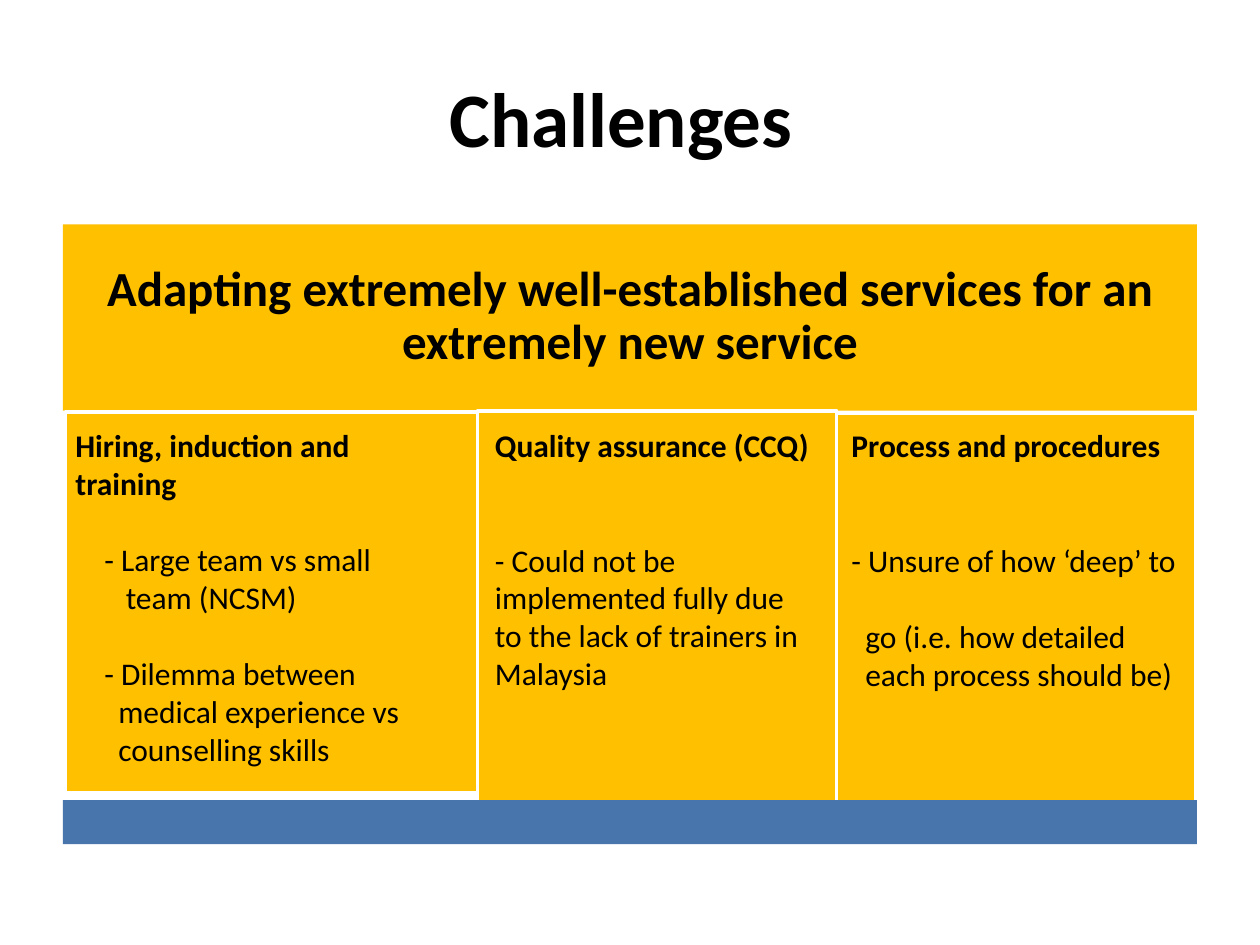
import pptx
import pptx.dml.color
import pptx.enum.shapes
import pptx.enum.text
import pptx.util
from typing import NamedTuple

COLS, ROWS = 100, 75
WIDE, HIGH = pptx.util.Inches(10), pptx.util.Inches(7.5)
GOLD, BLUE, WHITE, BLACK = "FFC000", "4875AC", "FFFFFF", "000000"
BLANK = 22  # height in points of one 18-point line
ALIGN = pptx.enum.text.PP_ALIGN
MIDDLE = pptx.enum.text.MSO_ANCHOR.MIDDLE


class Area(NamedTuple):
    """Left, top, width and height in grid columns and rows."""
    x: float
    y: float
    w: float
    h: float


class Line(NamedTuple):
    """Text with space before in points, and left and hanging indents in inches."""
    text: str
    before: float = 0
    left: float = 0
    hang: float = 0


class Column(NamedTuple):
    panel: Area
    box: Area
    head: str
    lines: tuple[Line, ...]


COLUMNS = (
    Column(Area(5.2, 32.7, 32.9, 30.2), Area(5, 33.3, 30.8, 31.3),
           "Hiring, induction and training",
           (Line("- Large team vs small\vteam (NCSM)", BLANK, 0.4, 0.17),
            Line("- Dilemma between\vmedical experience vs\vcounselling skills",
                 BLANK, 0.34, 0.11))),
    Column(Area(37.9, 32.6, 28.5, 31.2), Area(38.3, 33.3, 27.5, 25.2),
           "Quality assurance (CCQ)",
           (Line("- Could not be implemented fully due to the lack of "
                 "trainers in Malaysia", 2 * BLANK),)),
    Column(Area(66.4, 32.8, 28.5, 30.9), Area(66.6, 33.3, 28.3, 25.2),
           "Process and procedures",
           (Line("- Unsure of how ‘deep’ to", 2 * BLANK),
            Line("go (i.e. how detailed\veach process should be)",
                 BLANK, 0.11))),
)


def rgb(code: str) -> pptx.dml.color.RGBColor:
    return pptx.dml.color.RGBColor.from_string(code)


def place(area: Area) -> tuple[int, int, int, int]:
    """Turn grid units into slide lengths."""
    return (int(area.x * WIDE / COLS), int(area.y * HIGH / ROWS),
            int(area.w * WIDE / COLS), int(area.h * HIGH / ROWS))


def style(para, size: float, bold: bool) -> None:
    form = {"name": "Calibri", "size": pptx.util.Pt(size), "bold": bold}
    for key, value in form.items():
        setattr(para.font, key, value)
    para.font.color.rgb = rgb(BLACK)


def panel(slide, area: Area, fill: str, edge: str | None = None):
    shape = slide.shapes.add_shape(
        pptx.enum.shapes.MSO_SHAPE.RECTANGLE, *place(area))
    shape.shadow.inherit = False
    shape.fill.solid()
    shape.fill.fore_color.rgb = rgb(fill)
    if edge:
        shape.line.color.rgb = rgb(edge)
        shape.line.width = pptx.util.Pt(2)
    else:
        shape.line.fill.background()
    return shape


def banner(slide, area: Area, text: str) -> None:
    frame = panel(slide, area, GOLD).text_frame
    pad = pptx.util.Inches(0.12)
    form = {"word_wrap": True, "vertical_anchor": MIDDLE, "margin_left": pad,
            "margin_top": pad, "margin_right": pad, "margin_bottom": pad}
    for key, value in form.items():
        setattr(frame, key, value)
    para = frame.paragraphs[0]
    para.text = text
    para.alignment = ALIGN.CENTER
    para.line_spacing = 0.9
    style(para, 28, True)


def notes(slide, col: Column) -> None:
    """Write a column's heading and its points."""
    frame = slide.shapes.add_textbox(*place(col.box)).text_frame
    frame.word_wrap = True
    frame.auto_size = pptx.enum.text.MSO_AUTO_SIZE.SHAPE_TO_FIT_TEXT
    head = frame.paragraphs[0]
    head.text = col.head
    style(head, 18, True)
    for line in col.lines:
        para = frame.add_paragraph()
        para.text = line.text
        para.space_before = pptx.util.Pt(line.before)
        props = para._p.get_or_add_pPr()
        props.set("marL", str(pptx.util.Inches(line.left)))
        props.set("indent", str(pptx.util.Inches(-line.hang)))
        style(para, 18, False)


def title(slide, area: Area, text: str) -> None:
    shape = slide.shapes.title
    shape.left, shape.top, shape.width, shape.height = place(area)
    shape.text_frame.vertical_anchor = MIDDLE
    para = shape.text_frame.paragraphs[0]
    para.text = text
    para.alignment = ALIGN.CENTER
    style(para, 44, True)


def main() -> None:
    deck = pptx.Presentation()
    deck.slide_width, deck.slide_height = WIDE, HIGH
    slide = deck.slides.add_slide(deck.slide_layouts[5])
    title(slide, Area(5, 3, 90, 12.5), "Challenges ")
    banner(slide, Area(5, 17.8, 90, 14.8),
           "Adapting extremely well-established services "
           "for an extremely new service")
    for col in COLUMNS:
        panel(slide, col.panel, GOLD, WHITE)
    panel(slide, Area(5, 63.5, 90, 3.5), BLUE)
    for col in COLUMNS:
        notes(slide, col)
    deck.save("out.pptx")


if __name__ == "__main__":
    main()
